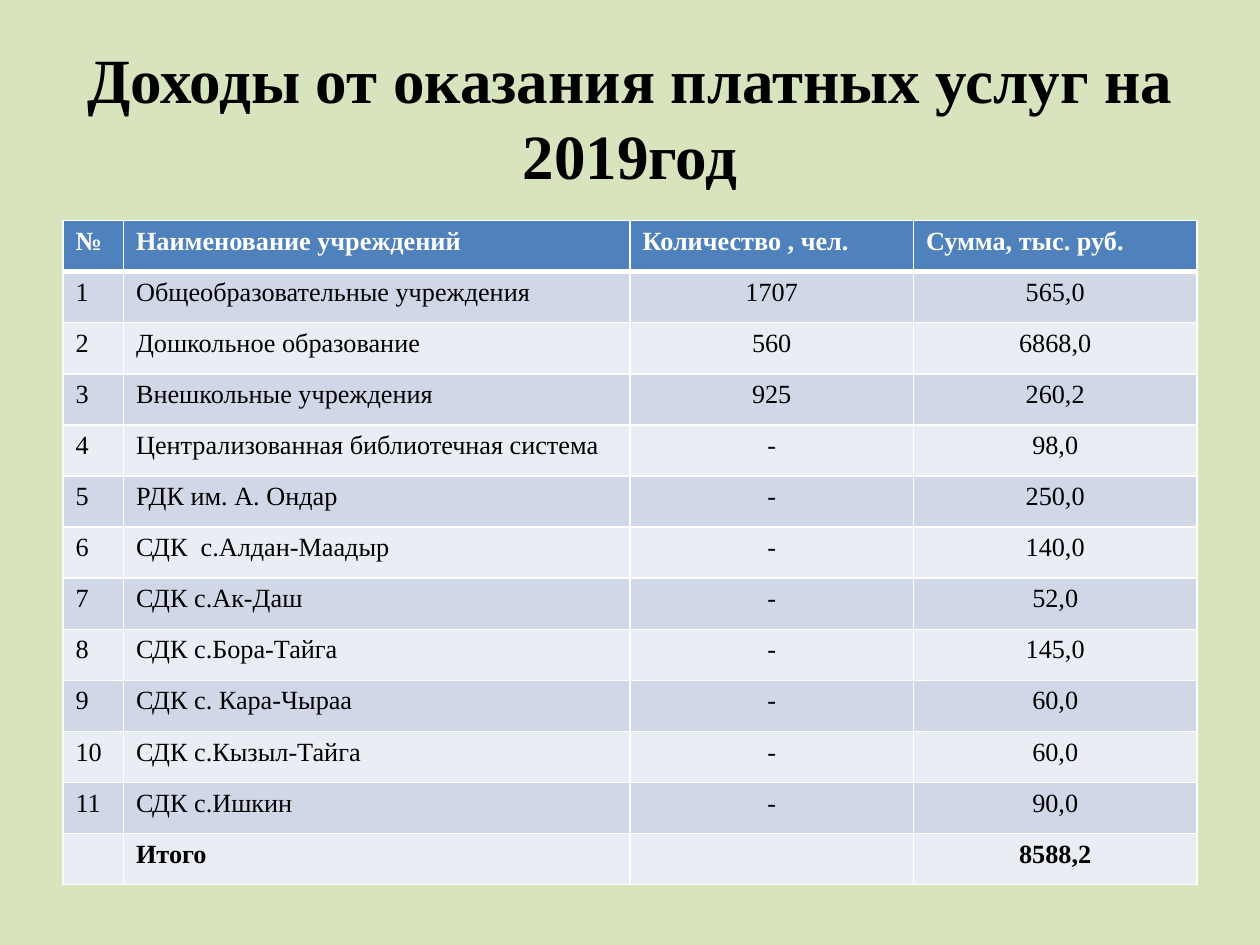
from lxml import etree
from pptx import Presentation
from pptx import util as u
from pptx.dml import color
from pptx.enum import text
from pptx.oxml import ns

FONT = "Times New Roman"
COLUMN_WIDTHS = [34.56, 289.44, 162, 162]
HEADER = ["№", "Наименование учреждений", "Количество , чел.", "Сумма, тыс. руб."]
INSTITUTIONS = [
    ("Общеобразовательные учреждения", "1707", "565,0"),
    ("Дошкольное образование", "560", "6868,0"),
    ("Внешкольные учреждения", "925", "260,2"),
    ("Централизованная библиотечная система", "-", "98,0"),
    ("РДК им. А. Ондар", "-", "250,0"),
    ("СДК  с.Алдан-Маадыр", "-", "140,0"),
    ("СДК с.Ак-Даш", "-", "52,0"),
    ("СДК с.Бора-Тайга", "-", "145,0"),
    ("СДК с. Кара-Чыраа", "-", "60,0"),
    ("СДК с.Кызыл-Тайга", "-", "60,0"),
    ("СДК с.Ишкин", "-", "90,0"),
]
TOTAL = ["", "Итого", "", "8588,2"]


def paint(fill, hex_color):
    fill.solid()
    fill.fore_color.rgb = color.RGBColor.from_string(hex_color)


def write(para, words, size, hex_color, bold, centred):
    para.text = words
    para.alignment = text.PP_ALIGN.CENTER if centred else text.PP_ALIGN.LEFT
    para.font.name = FONT
    para.font.size = u.Pt(size)
    para.font.bold = bold
    paint(para.font.fill, hex_color)


def set_borders(cell, hex_color, top, bottom):
    """Draw all four cell edges; the side edges are 1 pt wide."""
    properties = cell._tc.get_or_add_tcPr()
    widths = {"a:lnL": 1, "a:lnR": 1, "a:lnT": top, "a:lnB": bottom}
    for position, (tag, width) in enumerate(widths.items()):
        line = etree.Element(ns.qn(tag), w=str(u.Pt(width)))
        fill = etree.SubElement(line, ns.qn("a:solidFill"))
        etree.SubElement(fill, ns.qn("a:srgbClr"), val=hex_color)
        properties.insert(position, line)


def add_title(page, left, top, width, height):
    box = page.shapes.add_textbox(u.Pt(left), u.Pt(top), u.Pt(width), u.Pt(height))
    frame = box.text_frame
    frame.word_wrap = True
    frame.vertical_anchor = text.MSO_ANCHOR.MIDDLE
    write(frame.paragraphs[0], "Доходы от оказания платных услуг на 2019год",
          36, "000000", True, True)


def add_income_table(page, left, top, width, height):
    numbered = [[str(number), *row] for number, row in enumerate(INSTITUTIONS, 1)]
    rows = [HEADER, *numbered, TOTAL]
    table = page.shapes.add_table(len(rows), len(HEADER), u.Pt(left), u.Pt(top),
                                  u.Pt(width), u.Pt(height)).table
    for column, column_width in zip(table.columns, COLUMN_WIDTHS):
        column.width = u.Pt(column_width)
    for r, row in enumerate(rows):
        table.rows[r].height = u.Pt(height / len(rows))
        is_header = r == 0
        band = "4F81BD" if is_header else "D0D8E8" if r % 2 else "E9EDF4"
        for c, words in enumerate(row):
            cell = table.cell(r, c)
            paint(cell.fill, band)
            set_borders(cell, "FFFFFF", 3 if r == 1 else 1, 3 if is_header else 1)
            write(cell.text_frame.paragraphs[0], words, 15,
                  "FFFFFF" if is_header else "000000",
                  row in (HEADER, TOTAL), c >= 2 and not is_header)


def main():
    deck = Presentation()
    deck.slide_width, deck.slide_height = u.Pt(720), u.Pt(540)
    page = deck.slides.add_slide(deck.slide_layouts[6])
    paint(page.background.fill, "D7E4BD")
    add_title(page, 36, 21.6, 648, 90)
    add_income_table(page, 36, 126, 648, 379.6)
    deck.save("out.pptx")


if __name__ == "__main__":
    main()
